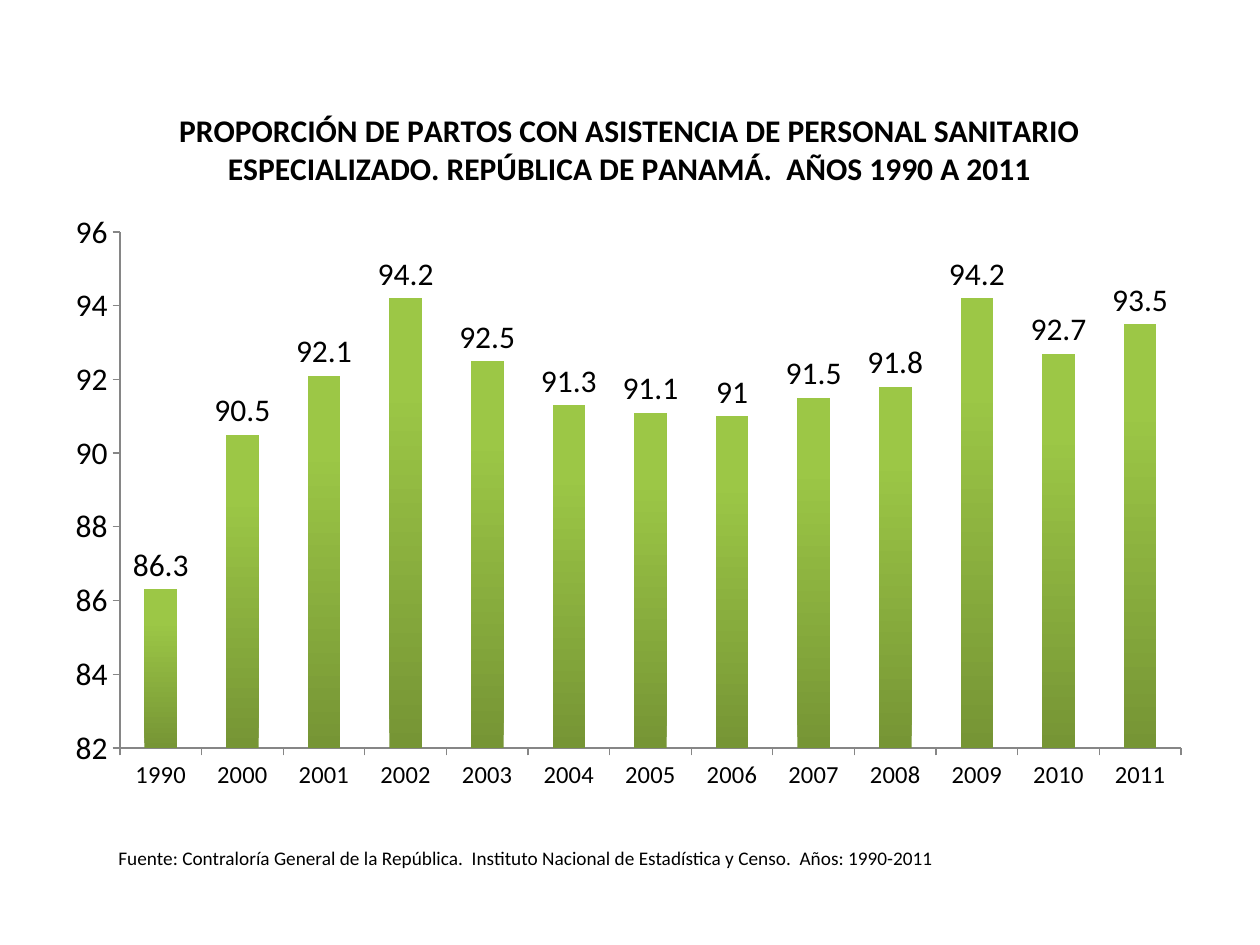
from lxml.etree import SubElement
from pptx import Presentation
from pptx.chart.data import CategoryChartData
from pptx.dml.color import RGBColor
from pptx.enum.chart import XL_CHART_TYPE, XL_LABEL_POSITION, XL_TICK_MARK
from pptx.oxml.ns import qn
from pptx.util import Emu, Pt

PX_PER_INCH = 126
FONT = "Calibri"
COLORS = {
    "text": "000000",
    "axis": "868686",
    "bar_bottom": "769535",
    "bar_top": "9CC746",
}
TITLE = (
    "PROPORCIÓN DE PARTOS CON ASISTENCIA DE PERSONAL SANITARIO "
    "ESPECIALIZADO. REPÚBLICA DE PANAMÁ.  AÑOS 1990 A 2011"
)
SOURCE = (
    "Fuente: Contraloría General de la República.  "
    "Instituto Nacional de Estadística y Censo.  Años: 1990-2011"
)
YEARS = ["1990"] + [str(year) for year in range(2000, 2012)]
BIRTHS = [86.3, 90.5, 92.1, 94.2, 92.5, 91.3, 91.1, 91, 91.5, 91.8, 94.2, 92.7, 93.5]
CHART_BOX = (53, 82, 1153, 723)
PLOT_BOX = (120, 232, 1061, 516)
SOURCE_BOX = (106, 840, 842, 42)


def px(length):
    return Emu(round(length * 914400 / PX_PER_INCH))


def color(name):
    return RGBColor.from_string(COLORS[name])


def style_font(font, size, bold=False):
    font.name = FONT
    font.size = Pt(size)
    font.bold = bold
    font.color.rgb = color("text")


def add_text(slide, box, text, size):
    frame = slide.shapes.add_textbox(*map(px, box)).text_frame
    frame.word_wrap = True
    paragraph = frame.paragraphs[0]
    paragraph.text = text
    style_font(paragraph.font, size)


def style_axis(axis, size):
    axis.has_major_gridlines = False
    axis.major_tick_mark = XL_TICK_MARK.OUTSIDE
    axis.minor_tick_mark = XL_TICK_MARK.NONE
    axis.format.line.color.rgb = color("axis")
    axis.format.line.width = Pt(0.75)
    style_font(axis.tick_labels.font, size)


def style_bars(plot):
    plot.gap_width = 150
    plot.vary_by_categories = False
    fill = plot.series[0].format.fill
    fill.gradient()
    fill.gradient_angle = 90
    bottom, top = fill.gradient_stops
    bottom.position, top.position = 0, 0.8
    bottom.color.rgb = color("bar_bottom")
    top.color.rgb = color("bar_top")

    plot.has_data_labels = True
    labels = plot.data_labels
    labels.show_value = True
    labels.position = XL_LABEL_POSITION.OUTSIDE_END
    style_font(labels.font, 18)


def place_plot(chart):
    """Fix the inner plot area as fractions of the chart frame."""
    plot_area = chart._chartSpace.chart.plotArea
    layout = plot_area.find(qn("c:layout"))
    if layout is None:
        layout = SubElement(plot_area, qn("c:layout"))
        plot_area.insert(0, layout)
    manual = SubElement(layout, qn("c:manualLayout"))
    left, top, width, height = CHART_BOX
    plot_left, plot_top, plot_width, plot_height = PLOT_BOX
    settings = {
        "layoutTarget": "inner",
        "xMode": "edge",
        "yMode": "edge",
        "x": (plot_left - left) / width,
        "y": (plot_top - top) / height,
        "w": plot_width / width,
        "h": plot_height / height,
    }
    for tag, value in settings.items():
        SubElement(manual, qn(f"c:{tag}")).set("val", str(value))


def add_births_chart(slide):
    data = CategoryChartData(number_format="General")
    data.categories = YEARS
    data.add_series("Series 1", BIRTHS)
    chart = slide.shapes.add_chart(
        XL_CHART_TYPE.COLUMN_CLUSTERED, *map(px, CHART_BOX), data
    ).chart
    style_font(chart.font, 10)
    chart.has_legend = False
    chart.has_title = True
    paragraph = chart.chart_title.text_frame.paragraphs[0]
    paragraph.text = TITLE
    style_font(paragraph.font, 18, bold=True)
    chart.chart_title.include_in_layout = False

    style_axis(chart.category_axis, 14)
    style_axis(chart.value_axis, 18)
    chart.value_axis.minimum_scale = 82
    chart.value_axis.maximum_scale = 96
    chart.value_axis.major_unit = 2
    style_bars(chart.plots[0])
    place_plot(chart)


def main():
    presentation = Presentation()
    presentation.slide_width = px(1260)
    presentation.slide_height = px(945)
    slide = presentation.slides.add_slide(presentation.slide_layouts[6])
    add_text(slide, SOURCE_BOX, SOURCE, 11)
    add_births_chart(slide)
    presentation.save("out.pptx")


if __name__ == "__main__":
    main()
